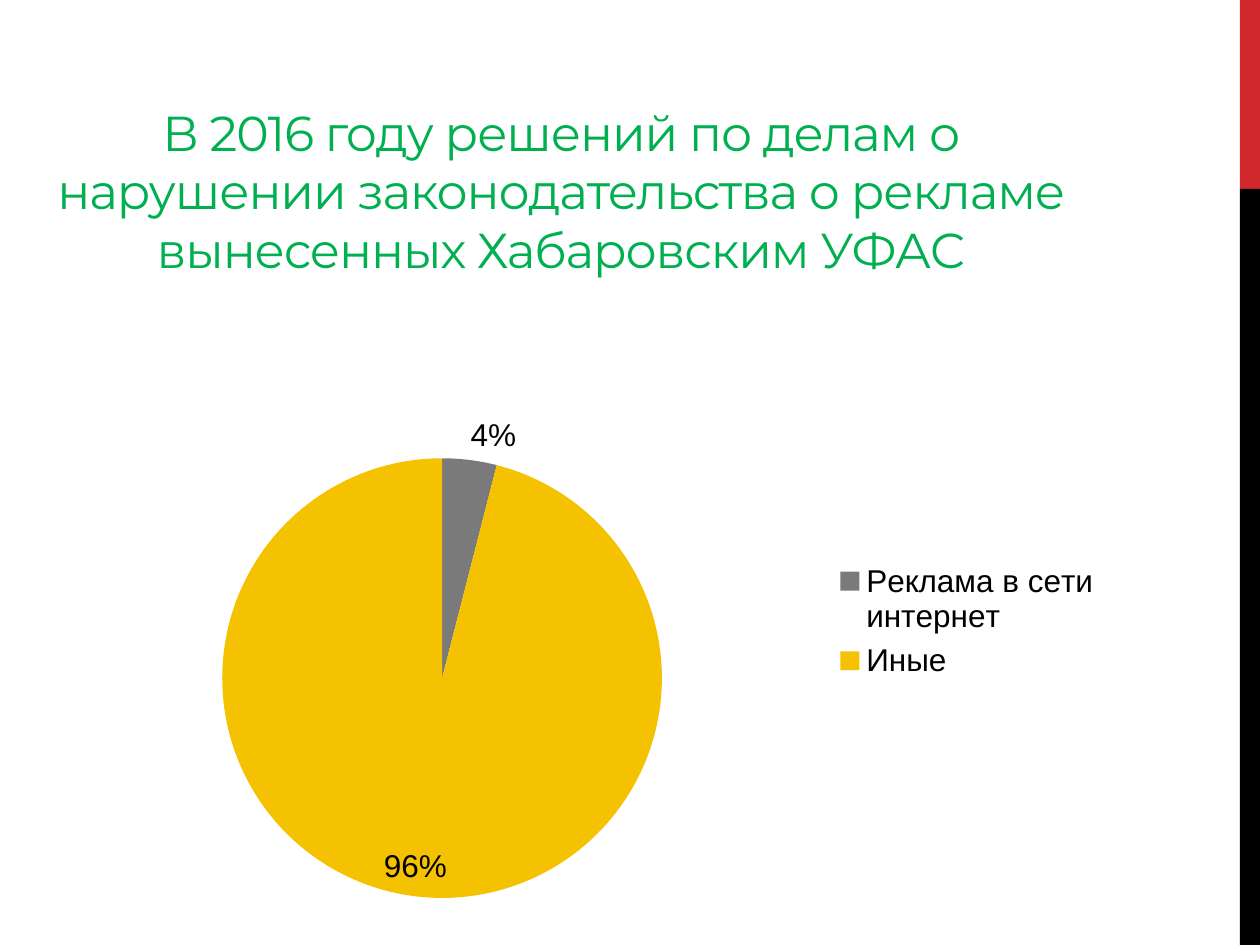
from typing import NamedTuple

from lxml import etree
from pptx import Presentation
from pptx.chart.data import CategoryChartData
from pptx.dml.color import RGBColor
from pptx.enum.chart import XL_CHART_TYPE as ChartType
from pptx.enum.chart import XL_LABEL_POSITION as LabelPos
from pptx.enum.chart import XL_LEGEND_POSITION as LegendPos
from pptx.enum.shapes import MSO_SHAPE as Shape
from pptx.enum.text import MSO_ANCHOR as Anchor
from pptx.enum.text import PP_ALIGN as Align
from pptx.oxml import parse_xml
from pptx.oxml.ns import nsdecls, qn
from pptx.util import Pt


class Box(NamedTuple):
    """Lengths in points, or fractions of the chart in a layout."""
    left: float
    top: float
    width: float
    height: float


class Bar(NamedTuple):
    box: Box
    color: str


class Slice(NamedTuple):
    name: str
    value: int
    color: str


TITLE = ("В 2016 году решений по делам о нарушении законодательства "
         "о рекламе вынесенных Хабаровским УФАС")
TITLE_BOX = Box(25.2, 9.4, 590.4, 153.4)
CHART_BOX = Box(36.7, 179.3, 599.8, 344.2)
PIE_LAYOUT = Box(0.15, 0.24, 0.42, 0.73)
LEGEND_LAYOUT = Box(0.73, 0.4, 0.26, 0.22)
BARS = [
    Bar(Box(708.5, 0, 11.5, 108), "D1282E"),
    Bar(Box(708.5, 108, 11.5, 432), "000000"),
]
SLICES = [
    Slice("Реклама в сети интернет", 4, "7A7A7A"),
    Slice("Иные", 96, "F5C201"),
]


def rgb(color: str) -> RGBColor:
    return RGBColor.from_string(color)


def points(box: Box) -> list:
    return [Pt(v) for v in box]


def add_bar(slide, bar: Bar) -> None:
    sp = slide.shapes.add_shape(Shape.RECTANGLE, *points(bar.box))
    sp.shadow.inherit = False
    sp.fill.solid()
    sp.fill.fore_color.rgb = rgb(bar.color)
    sp.line.fill.background()


def set_title(slide) -> None:
    sp = slide.shapes.title
    sp.left, sp.top, sp.width, sp.height = points(TITLE_BOX)
    tf = sp.text_frame
    tf.word_wrap = True
    tf.vertical_anchor = Anchor.BOTTOM
    p = tf.paragraphs[0]
    p.alignment = Align.CENTER
    r = p.add_run()
    r.text = TITLE
    r.font.name = "Montserrat"
    r.font.size = Pt(28)
    r.font.color.rgb = rgb("00B050")
    r.font._element.set("spc", "-60")


def manual_layout(box: Box, inner: bool = False) -> etree._Element:
    target = '<c:layoutTarget val="inner"/>' if inner else ""
    sizes = "".join(f'<c:{tag} val="{v}"/>' for tag, v in zip("xywh", box))
    return parse_xml(
        f'<c:layout {nsdecls("c")}><c:manualLayout>{target}'
        '<c:xMode val="edge"/><c:yMode val="edge"/>'
        f'{sizes}</c:manualLayout></c:layout>')


def add_pie(slide) -> None:
    data = CategoryChartData()
    data.categories = [s.name for s in SLICES]
    data.add_series("Series 1", [s.value for s in SLICES])
    chart = slide.shapes.add_chart(ChartType.PIE, *points(CHART_BOX), data).chart
    chart.has_title = False
    chart.font.name = "Arial"
    chart.font.size = Pt(18)
    chart.font.color.rgb = rgb("000000")

    plot = chart.plots[0]
    plot.vary_by_categories = True
    for i, part in enumerate(SLICES):
        fill = plot.series[0].points[i].format.fill
        fill.solid()
        fill.fore_color.rgb = rgb(part.color)
    plot.has_data_labels = True
    labels = plot.data_labels
    labels.show_value = False
    labels.show_percentage = True
    labels.number_format = "0%"
    labels.number_format_is_linked = False
    labels.position = LabelPos.BEST_FIT

    chart.has_legend = True
    legend = chart.legend
    legend.position = LegendPos.RIGHT
    legend.include_in_layout = False
    area = chart._chartSpace.find(".//" + qn("c:plotArea"))
    for old in (area.find(qn("c:layout")), legend._element.find(qn("c:layout"))):
        if old is not None:
            old.getparent().remove(old)
    area.insert(0, manual_layout(PIE_LAYOUT, inner=True))
    legend._element.find(qn("c:legendPos")).addnext(manual_layout(LEGEND_LAYOUT))


def main() -> None:
    prs = Presentation()
    prs.slide_width, prs.slide_height = Pt(720), Pt(540)
    slide = prs.slides.add_slide(prs.slide_layouts[5])
    for bar in BARS:
        add_bar(slide, bar)
    set_title(slide)
    add_pie(slide)
    prs.save("out.pptx")


if __name__ == "__main__":
    main()
